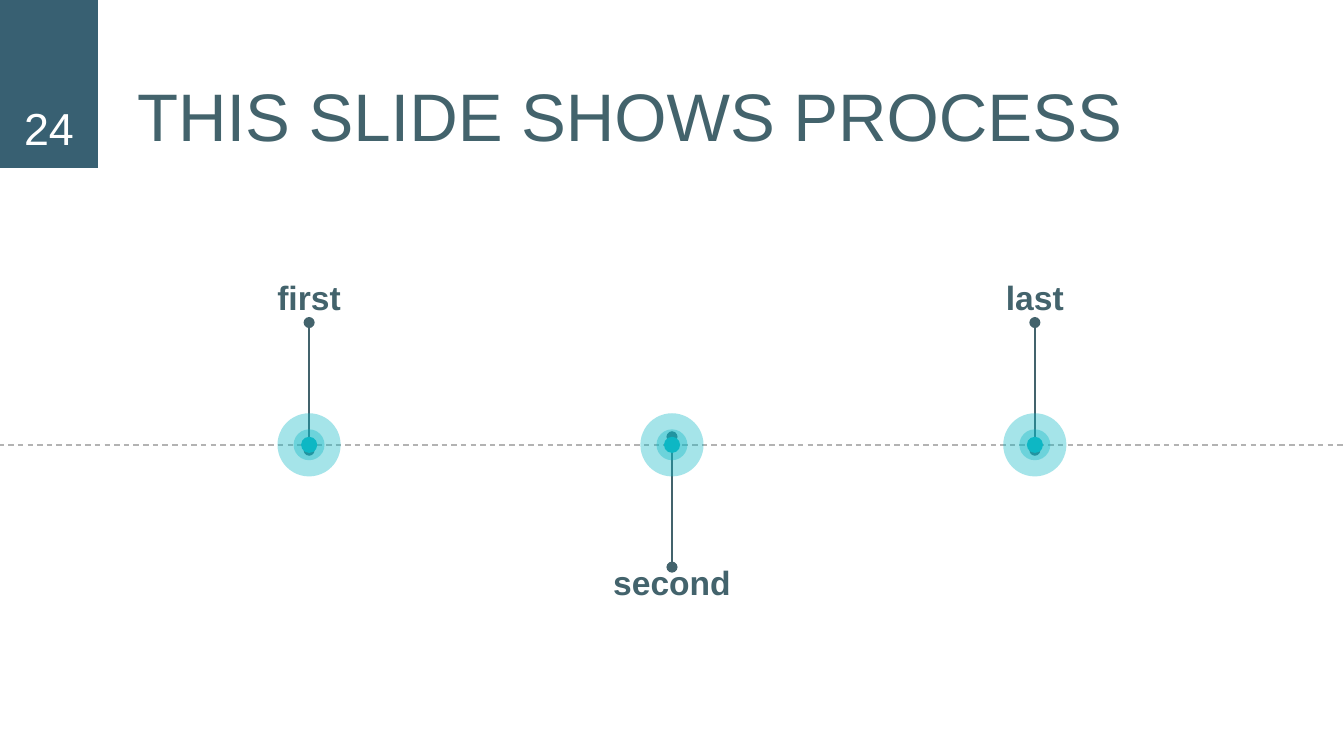
from dataclasses import dataclass
from lxml.etree import SubElement
from pptx import Presentation
from pptx.dml.color import RGBColor
from pptx.enum.dml import MSO_LINE
from pptx.enum.shapes import MSO_CONNECTOR, MSO_SHAPE
from pptx.enum.text import MSO_ANCHOR, MSO_AUTO_SIZE, PP_ALIGN
from pptx.oxml.ns import qn
from pptx.util import Inches, Pt

WIDE = 10
HIGH = WIDE * 9 / 16
AXIS = 3.31
HUES = {"slate": "386072", "ink": "43636C", "teal": "0DB7C4",
        "grey": "B3B3B3", "white": "FFFFFF"}
RINGS = ((0.47, 37), (0.23, 37), (0.12, 100))


@dataclass
class Step:
    """One stop on the axis, placed by its share of the slide width."""
    name: str
    share: float
    start: float
    end: float
    top: float


STEPS = (Step("first", 0.23, 3.35, 2.4, 1.96),
         Step("second", 0.5, 3.25, 4.22, 4.08),
         Step("last", 0.77, 3.35, 2.4, 1.96))


def tint(hue: str) -> RGBColor:
    """Return the colour of a named hue."""
    return RGBColor.from_string(HUES[hue])


def write(shape, text: str, size: int, hue: str, align=PP_ALIGN.CENTER,
          anchor=MSO_ANCHOR.TOP, bold: bool = False) -> None:
    """Fill a shape with one formatted paragraph."""
    frame = shape.text_frame
    frame.text = text
    pad = Inches(0.1)
    look = {"word_wrap": True, "auto_size": MSO_AUTO_SIZE.NONE,
            "vertical_anchor": anchor, "margin_left": pad, "margin_right": pad,
            "margin_top": pad, "margin_bottom": pad}
    for key, value in look.items():
        setattr(frame, key, value)
    para = frame.paragraphs[0]
    para.alignment = align
    font = para.runs[0].font
    for key, value in {"name": "Arial", "size": Pt(size), "bold": bold}.items():
        setattr(font, key, value)
    font.color.rgb = tint(hue)


def solid(shapes, kind, box: tuple, hue: str, alpha: int = 100):
    """Add a filled shape with no outline."""
    shape = shapes.add_shape(kind, *map(Inches, box))
    shape.shadow.inherit = False
    shape.fill.solid()
    shape.fill.fore_color.rgb = tint(hue)
    shape.line.fill.background()
    if alpha < 100:
        color = shape.fill._xPr.find(".//" + qn("a:srgbClr"))
        SubElement(color, qn("a:alpha"), val=str(alpha * 1000))
    return shape


def rule(shapes, ends: tuple, hue: str, dash=None, dots: bool = False) -> None:
    """Add a thin line, dashed or with a dot at both ends."""
    link = shapes.add_connector(MSO_CONNECTOR.STRAIGHT, *map(Inches, ends))
    link.line.color.rgb = tint(hue)
    link.line.width = Pt(0.75)
    if dash:
        link.line.dash_style = dash
    if dots:
        for tag in ("a:headEnd", "a:tailEnd"):
            SubElement(link.line._get_or_add_ln(), qn(tag), type="oval")
    SubElement(link._element.spPr, qn("a:effectLst"))


def label(shapes, step: Step) -> None:
    """Add the name of a step, centred on its stop."""
    wide = 1.36
    box = (step.share * WIDE - wide / 2, step.top, wide, 0.45)
    write(shapes.add_textbox(*map(Inches, box)), step.name, 18, "ink", bold=True)


def target(shapes, step: Step) -> None:
    """Add the grouped rings of a step."""
    group = shapes.add_group_shape()
    for size, alpha in RINGS:
        box = (step.share * WIDE - size / 2, AXIS - size / 2, size, size)
        solid(group.shapes, MSO_SHAPE.OVAL, box, "teal", alpha)


def main() -> None:
    """Build and save the slide."""
    deck = Presentation()
    deck.slide_width, deck.slide_height = Inches(WIDE), Inches(HIGH)
    slide = deck.slides.add_slide(deck.slide_layouts[5])
    shapes = slide.shapes
    title = shapes.title
    place = {"left": 0.92, "top": 0, "width": 8.42, "height": 1.25}
    for key, value in place.items():
        setattr(title, key, Inches(value))
    write(title, "THIS SLIDE SHOWS PROCESS", 36, "ink", PP_ALIGN.LEFT,
          MSO_ANCHOR.BOTTOM)
    badge = solid(shapes, MSO_SHAPE.RECTANGLE, (0, 0, 0.73, 1.25), "slate")
    write(badge, "24", 24, "white", anchor=MSO_ANCHOR.BOTTOM)
    rule(shapes, (-0.01, AXIS, WIDE + 0.01, AXIS), "grey", MSO_LINE.DASH)
    for step in STEPS:
        mid = step.share * WIDE
        rule(shapes, (mid, step.start, mid, step.end), "ink", dots=True)
    for draw in (label, target):
        for step in STEPS:
            draw(shapes, step)
    deck.save("out.pptx")


if __name__ == "__main__":
    main()
